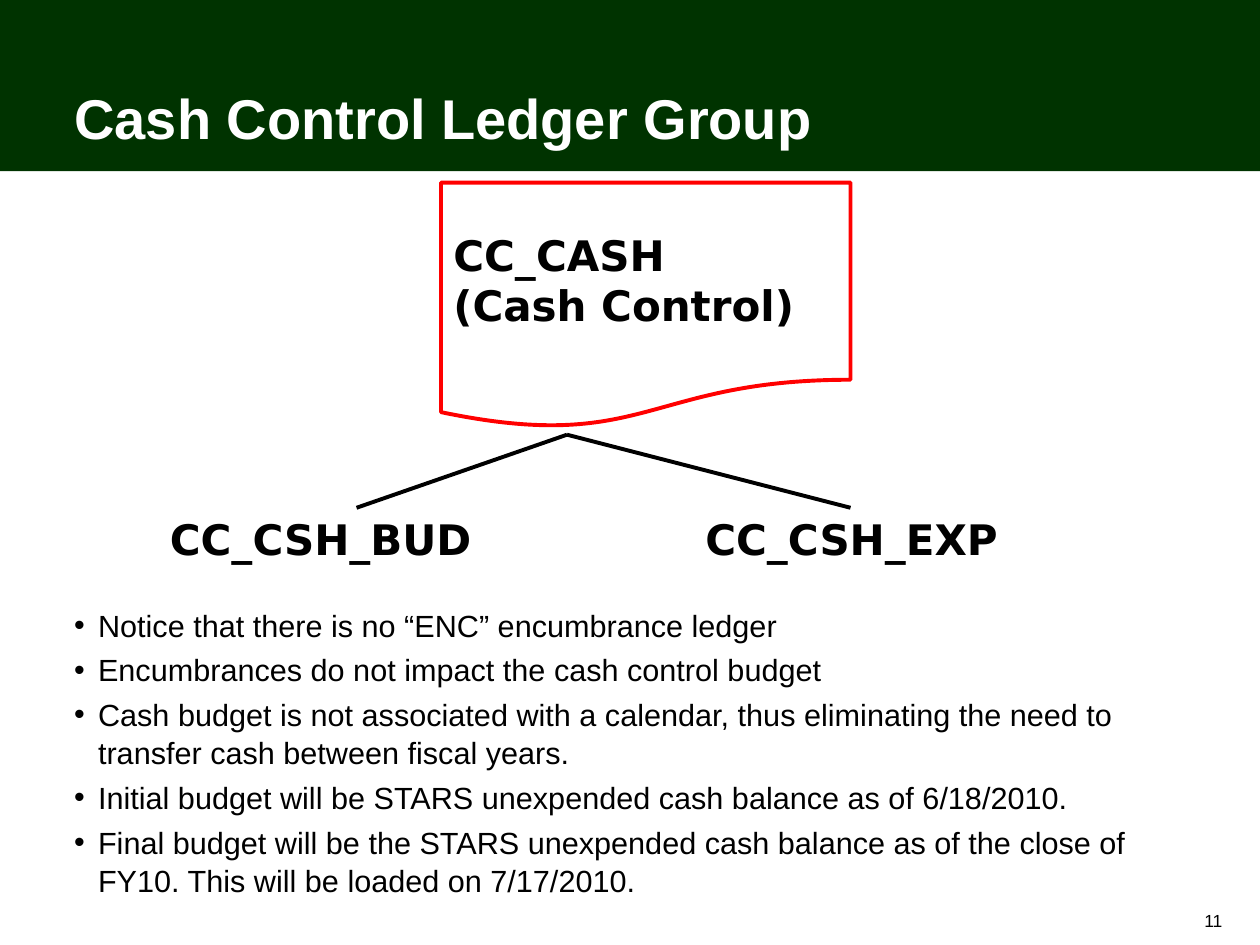
"""Build the Cash Control Ledger Group slide."""
from lxml import etree
from pptx import Presentation
from pptx.dml.color import RGBColor
from pptx.enum.shapes import MSO_CONNECTOR, MSO_SHAPE
from pptx.enum.text import MSO_ANCHOR, PP_ALIGN
from pptx.oxml.ns import qn
from pptx.util import Inches, Pt

STRAIGHT = MSO_CONNECTOR.STRAIGHT
RECTANGLE, DOCUMENT = MSO_SHAPE.RECTANGLE, MSO_SHAPE.FLOWCHART_DOCUMENT
TOP, BOTTOM = MSO_ANCHOR.TOP, MSO_ANCHOR.BOTTOM
LEFT, RIGHT = PP_ALIGN.LEFT, PP_ALIGN.RIGHT

GREEN = RGBColor(0x00, 0x33, 0x00)
RED = RGBColor(0xFF, 0x00, 0x00)
BLACK = RGBColor(0x00, 0x00, 0x00)
WHITE = RGBColor(0xFF, 0xFF, 0xFF)

BODY_FONT, LABEL_FONT = "Arial", "DejaVu Sans"

NOTES = [
    "Notice that there is no “ENC” encumbrance ledger",
    "Encumbrances do not impact the cash control budget",
    "Cash budget is not associated with a calendar, thus eliminating the need to "
    "transfer cash between fiscal years.",
    "Initial budget will be STARS unexpended cash balance as of 6/18/2010.",
    "Final budget will be the STARS unexpended cash balance as of the close of "
    "FY10. This will be loaded on 7/17/2010.",
]


def format_font(p, size, name=BODY_FONT, color=BLACK, bold=False):
    for r in p.runs:
        r.font.size = Pt(size)
        r.font.name = name
        r.font.color.rgb = color
        r.font.bold = bold


def add_title(s, text):
    sp = s.shapes.title
    sp.left, sp.top, sp.width, sp.height = (Inches(v) for v in (0.49, 0, 6.87, 1.25))
    tf = sp.text_frame
    tf.text = text
    tf.vertical_anchor = BOTTOM
    p = tf.paragraphs[0]
    p.alignment = LEFT
    format_font(p, 32, color=WHITE, bold=True)


def add_box(s, box, kind, fill=None, line=None):
    sp = s.shapes.add_shape(kind, *(Inches(v) for v in box))
    sp.shadow.inherit = False
    if fill is None:
        sp.fill.background()
    else:
        sp.fill.solid()
        sp.fill.fore_color.rgb = fill
    if line is None:
        sp.line.fill.background()
    else:
        sp.line.color.rgb = line
        sp.line.width = Pt(2.25)
    return sp


def add_text(s, box, lines, anchor=TOP):
    tf = s.shapes.add_textbox(*(Inches(v) for v in box)).text_frame
    tf.word_wrap = True
    tf.vertical_anchor = anchor
    tf.text = "\n".join(lines)
    return tf


def add_label(s, box, *lines):
    for p in add_text(s, box, lines).paragraphs:
        format_font(p, 24, LABEL_FONT, bold=True)


def add_bullets(s, box, lines):
    for i, p in enumerate(add_text(s, box, lines).paragraphs):
        pPr = p._p.get_or_add_pPr()
        pPr.set("marL", str(Inches(0.19)))
        pPr.set("indent", str(-Inches(0.19)))
        etree.SubElement(pPr, qn("a:buFont"), typeface=BODY_FONT)
        etree.SubElement(pPr, qn("a:buChar"), char="•")
        p.line_spacing = 1.05
        if i:
            p.space_before = Pt(3.5)
        format_font(p, 17.5)


def add_branch(s, start, end):
    c = s.shapes.add_connector(STRAIGHT, *(Inches(v) for v in start + end))
    c.line.color.rgb = BLACK
    c.line.width = Pt(2.25)
    etree.SubElement(c._element.spPr, qn("a:effectLst"))


def add_page_number(s, number):
    p = add_text(s, (7.95, 7.14, 1.85, 0.3), [number], BOTTOM).paragraphs[0]
    p.alignment = RIGHT
    p.line_spacing = 0.8
    format_font(p, 10)


def main():
    prs = Presentation()
    prs.slide_width, prs.slide_height = Inches(10), Inches(7.5)
    s = prs.slides.add_slide(prs.slide_layouts[5])

    add_title(s, "Cash Control Ledger Group")
    band = add_box(s, (0, 0, 10, 1.36), RECTANGLE, fill=GREEN)
    s.shapes.title._element.addprevious(band._element)

    add_bullets(s, (0.49, 4.75, 9.13, 2.25), NOTES)
    add_box(s, (3.5, 1.45, 3.25, 1.95), DOCUMENT, line=RED)
    add_label(s, (3.5, 1.77, 3.25, 0.97), "CC_CASH", "(Cash Control)")
    add_label(s, (1.25, 4.03, 2.75, 0.5), "CC_CSH_BUD")
    add_label(s, (5.5, 4.03, 2.83, 0.5), "CC_CSH_EXP")
    for x in (2.83, 6.75):
        add_branch(s, (4.5, 3.45), (x, 4.03))
    add_page_number(s, "11")

    prs.save("out.pptx")


if __name__ == "__main__":
    main()
